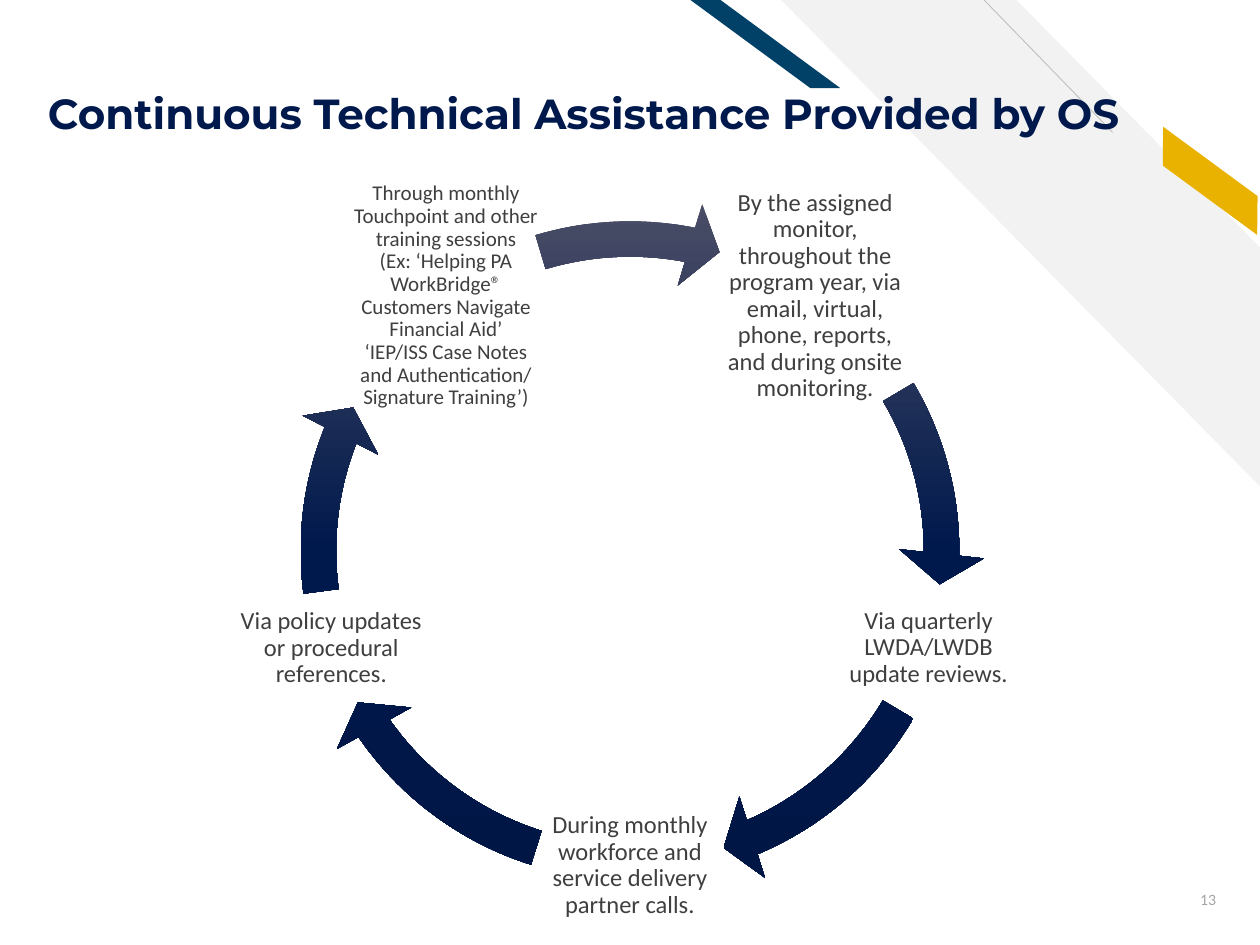
from lxml import etree
from pptx import Presentation
from pptx.dml.color import RGBColor
from pptx.enum.shapes import MSO_CONNECTOR, MSO_SHAPE as Preset
from pptx.enum.text import MSO_ANCHOR as Anchor, MSO_AUTO_SIZE, PP_ALIGN as Align
from pptx.oxml import parse_xml
from pptx.oxml.ns import nsdecls, qn
from pptx.util import Inches, Pt

NAVY, TEAL, GOLD = "00194C", "014067", "EAB200"
PALE, RULE, BODY, MUTED = "F2F2F2", "BFBFBF", "3F3F3F", "A5A5A5"
ARROW_STOPS = ((0, "4B4E66"), (50, NAVY), (100, "001644"))
RING = (2.19, 1.56, 5.62, 5.62)

# Each step: text, box, size, then end and start of the arrow that follows it
STEPS = (
    ("By the assigned monitor, throughout the program year, via email, virtual, "
     "phone, reports, and during onsite monitoring.",
     (5.72, 1.6, 1.5, 1.5), 14, 0.36, 197.66),
    ("Via quarterly LWDA/LWDB update reviews.",
     (6.62, 4.64, 1.5, 1), 14, 40.15, 18.4),
    ("During monthly workforce and service delivery partner calls.",
     (4.25, 5.47, 1.5, 2.8), 14, 87.14, 64.5),
    ("Via policy updates or procedural references.",
     (1.88, 4.7, 1.5, 0.89), 14, 121.04, 103.49),
    ("Through monthly Touchpoint and other training sessions\v(Ex: ‘Helping PA "
     "WorkBridge® Customers Navigate Financial Aid’\v‘IEP/ISS Case Notes and "
     "Authentication/ Signature Training’)",
     (2.79, 0.63, 1.5, 3.44), 12, 168.66, 151.99),
)


def rgb(value):
    return RGBColor.from_string(value)


class SlideBuilder:
    font = "Calibri"
    title_font = "Montserrat"

    def __init__(self, slide):
        self.slide = slide
        self.shapes = slide.shapes

    def set_text(self, holder, text, size, color, align, anchor, margins, font=None, bold=False):
        frame = holder.text_frame
        frame.word_wrap = True
        frame.auto_size = MSO_AUTO_SIZE.NONE
        frame.vertical_anchor = anchor
        (frame.margin_left, frame.margin_top,
         frame.margin_right, frame.margin_bottom) = map(Inches, margins)
        paragraph = frame.paragraphs[0]
        paragraph.text = text
        paragraph.alignment = align
        paragraph.line_spacing = 0.9
        for run in paragraph.runs:
            run.font.name = font or self.font
            run.font.size = Pt(size)
            run.font.bold = bold
            run.font.color.rgb = rgb(color)

    def title(self, text, box):
        heading = self.shapes.title
        heading.left, heading.top, heading.width, heading.height = map(Inches, box)
        self.set_text(heading, text, 24, NAVY, Align.LEFT, Anchor.BOTTOM,
                      (0.1, 0.05, 0.1, 0), self.title_font, True)
        # Keep the title in front of the decoration
        self.shapes._spTree.append(heading._element)

    def text(self, text, box, size, color=BODY, align=Align.CENTER, margins=(0.02,) * 4):
        label = self.shapes.add_textbox(*map(Inches, box))
        self.set_text(label, text, size, color, align, Anchor.MIDDLE, margins)

    def shape(self, preset, box, adjustments):
        figure = self.shapes.add_shape(preset, *map(Inches, box))
        figure.shadow.inherit = False
        figure.line.fill.background()
        for index, value in enumerate(adjustments):
            figure.adjustments[index] = value
        return figure

    def stripe(self, preset, box, adjustment, color, rotation=0):
        band = self.shape(preset, box, (adjustment,))
        band.fill.solid()
        band.fill.fore_color.rgb = rgb(color)
        band.rotation = rotation
        band._element.spPr.find(qn("a:xfrm")).set("flipH", "1")

    def arrow(self, end, start):
        arc = self.shape(Preset.CIRCULAR_ARROW, RING, (0.05, 3.36, end, start, 0.06))
        stops = "".join(f'<a:gs pos="{pos * 1000}"><a:srgbClr val="{color}"/></a:gs>'
                        for pos, color in ARROW_STOPS)
        gradient = parse_xml(f'<a:gradFill {nsdecls("a")} rotWithShape="1"><a:gsLst>{stops}'
                             '</a:gsLst><a:lin ang="5400000" scaled="0"/></a:gradFill>')
        arc._element.spPr.find(qn("a:prstGeom")).addnext(gradient)

    def line(self, start, end, color, width):
        rule = self.shapes.add_connector(MSO_CONNECTOR.STRAIGHT, *map(Inches, start + end))
        rule.line.color.rgb = rgb(color)
        rule.line.width = Pt(width)
        etree.SubElement(rule._element.spPr, qn("a:effectLst"))


def main():
    deck = Presentation()
    deck.slide_width, deck.slide_height = Inches(10), Inches(7.5)
    page = SlideBuilder(deck.slides.add_slide(deck.slide_layouts[5]))

    # Corner decoration
    page.stripe(Preset.DIAGONAL_STRIPE, (6.2, 0, 3.81, 3.87), 0.51, PALE)
    page.line((8.83, 1.05), (7.81, 0), RULE, 0.5)
    page.stripe(Preset.PARALLELOGRAM, (9.05, 1.31, 1.11, 0.25), 0.72, GOLD, 36.3)
    page.stripe(Preset.PARALLELOGRAM, (5.48, 0, 1.19, 0.7), 1.36, TEAL)

    # Title and page number
    page.title("Continuous Technical Assistance Provided by OS", (0.28, 0.23, 8.87, 0.87))
    page.text("13", (9.14, 6.95, 0.61, 0.4), 9, MUTED, Align.RIGHT, (0.1, 0.05, 0.1, 0.05))

    # Cycle of assistance
    for text, box, size, arrow_end, arrow_start in STEPS:
        page.text(text, box, size)
        page.arrow(arrow_end, arrow_start)

    deck.save("out.pptx")


if __name__ == "__main__":
    main()
